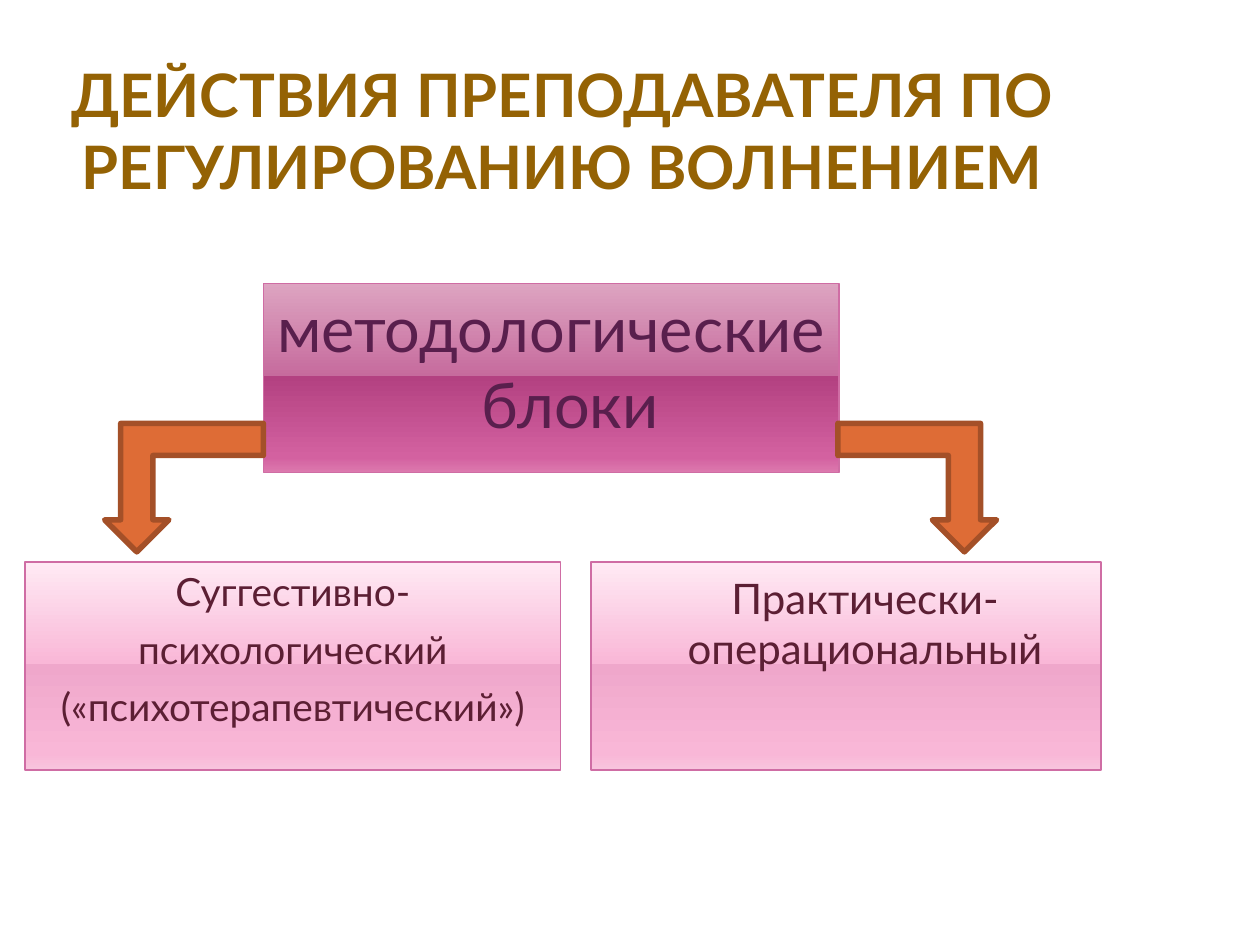
"""Build the slide on a teacher's ways of managing excitement."""
from dataclasses import dataclass

from lxml.etree import SubElement
from pptx import Presentation
from pptx.dml.color import RGBColor
from pptx.enum.shapes import MSO_SHAPE
from pptx.enum.text import MSO_ANCHOR, PP_ALIGN
from pptx.oxml.ns import qn
from pptx.util import Inches, Length, Pt

COLORS = {
    "title": "946204", "root_text": "591F4D", "branch_text": "5C1F34",
    "box_line": "CF6DA4", "arrow": "DE6C36", "arrow_line": "A45028",
}
GRADIENTS = {
    "root": ("DDA4C1", "C66B9D", "B34181", "D361A0", "DC79AE"),
    "branch": ("FFEAF4", "F9B7D7", "EFA7CB", "F9B7D7", "F8C4DD"),
}
STOPS = (0, 49, 49, 92, 100)
FONT = "Lato"
WIDTH, HEIGHT = Inches(10), Inches(7.5)
COLUMNS, ROWS = 100, 75


@dataclass(frozen=True)
class Area:
    column: float
    row: float
    columns: float
    rows: float

    def lengths(self) -> tuple[Length, ...]:
        across, down = WIDTH / COLUMNS, HEIGHT / ROWS
        return tuple(Length(round(n)) for n in (
            self.column * across, self.row * down,
            self.columns * across, self.rows * down))


@dataclass(frozen=True)
class Block:
    area: Area
    lines: tuple[str, ...]
    palette: str
    size: float
    hanging: bool = True
    top_inset: float = 0.05


@dataclass(frozen=True)
class Arrow:
    area: Area
    mirrored: bool


BRANCH_ROW, BRANCH_ROWS = 44.6, 16.5
BLOCKS = (
    Block(Area(46.9, BRANCH_ROW, 40.5, BRANCH_ROWS),
          ("Практически-операциональный",), "branch", 24, False, 0.08),
    Block(Area(2, BRANCH_ROW, 42.5, BRANCH_ROWS),
          ("Суггестивно-", "психологический", "(«психотерапевтический»)"),
          "branch", 22.2),
    Block(Area(20.9, 22.5, 45.7, 15), ("методологические блоки",), "root", 36),
)
ARROWS = tuple(Arrow(Area(column, 33.6, 12.6, 10.2), mirrored)
               for column, mirrored in ((8.3, False), (66.5, True)))


def rgb(name: str) -> RGBColor:
    return RGBColor.from_string(COLORS[name])


def write(frame, lines, *, color, size, bold=False, indent=None,
          anchor=MSO_ANCHOR.TOP, insets=(0.1, 0.05, 0.1, 0.05)) -> None:
    frame.word_wrap = True
    frame.vertical_anchor = anchor
    (frame.margin_left, frame.margin_top,
     frame.margin_right, frame.margin_bottom) = map(Inches, insets)
    for number, line in enumerate(lines):
        paragraph = frame.add_paragraph() if number else frame.paragraphs[0]
        paragraph.alignment = PP_ALIGN.CENTER
        paragraph.space_before = Pt(6 if number else 0)
        if indent:
            margin, first = indent
            properties = paragraph._p.get_or_add_pPr()
            properties.set("marL", str(Inches(margin)))
            properties.set("indent", str(Inches(first)))
        run = paragraph.add_run()
        run.text = line
        run.font.name, run.font.size, run.font.bold = FONT, Pt(size), bold
        run.font.color.rgb = rgb(color)


def fill_gradient(shape, palette: str) -> None:
    shape.fill.gradient()
    shape.fill.gradient_angle = 270
    stops = shape._element.spPr.find(qn("a:gradFill")).find(qn("a:gsLst"))
    for stop in list(stops):
        stops.remove(stop)
    for position, color in zip(STOPS, GRADIENTS[palette]):
        stop = SubElement(stops, qn("a:gs"), pos=str(position * 1000))
        SubElement(stop, qn("a:srgbClr"), val=color)


def add_outlined(slide, kind, area: Area, line: str, width: float):
    shape = slide.shapes.add_shape(kind, *area.lengths())
    shape.shadow.inherit = False
    shape.line.color.rgb = rgb(line)
    shape.line.width = Pt(width)
    return shape


def add_block(slide, block: Block) -> None:
    shape = add_outlined(slide, MSO_SHAPE.RECTANGLE, block.area, "box_line", 0.9)
    fill_gradient(shape, block.palette)
    write(shape.text_frame, block.lines, color=f"{block.palette}_text",
          size=block.size, indent=(0.3, -0.3 if block.hanging else 0),
          insets=(0.1, block.top_inset, 0.1, 0.05))


def add_arrow(slide, arrow: Arrow) -> None:
    shape = add_outlined(slide, MSO_SHAPE.BENT_UP_ARROW, arrow.area,
                         "arrow_line", 3.15)
    shape.fill.solid()
    shape.fill.fore_color.rgb = rgb("arrow")
    shape.rotation = 180
    if arrow.mirrored:
        shape._element.spPr.xfrm.set("flipH", "1")


def main() -> None:
    deck = Presentation()
    deck.slide_width, deck.slide_height = WIDTH, HEIGHT
    slide = deck.slides.add_slide(deck.slide_layouts[6])
    title = slide.shapes.add_textbox(*Area(5, 3.5, 79.2, 12.5).lengths())
    write(title.text_frame,
          ("ДЕЙСТВИЯ ПРЕПОДАВАТЕЛЯ ПО РЕГУЛИРОВАНИЮ ВОЛНЕНИЕМ",),
          color="title", size=34.2, bold=True, anchor=MSO_ANCHOR.BOTTOM,
          insets=(0.05, 0, 0.05, 0))
    for block in BLOCKS:
        add_block(slide, block)
    for arrow in ARROWS:
        add_arrow(slide, arrow)
    deck.save("out.pptx")


if __name__ == "__main__":
    main()
